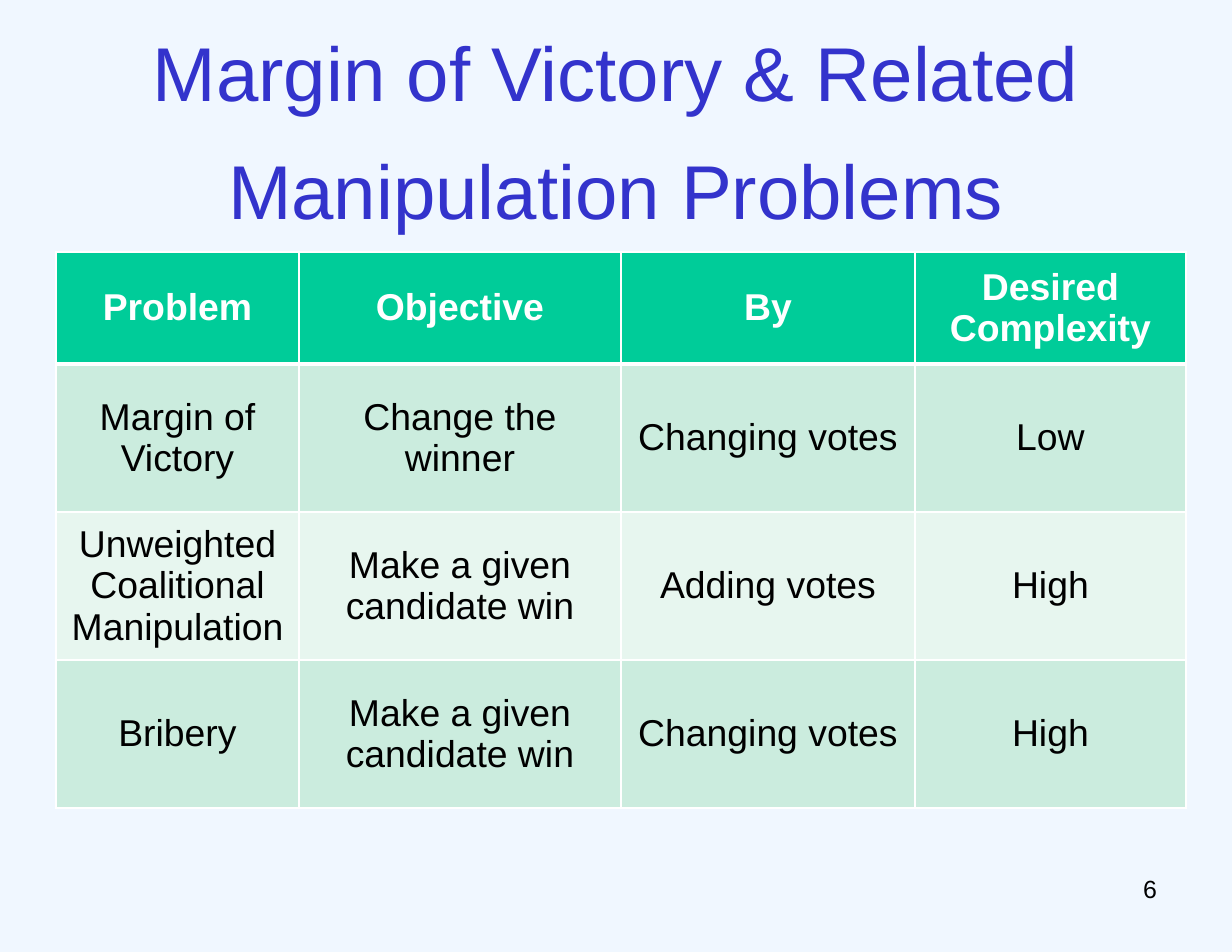
"""Build the slide that compares margin of victory with related manipulation problems."""
from dataclasses import dataclass

from lxml import etree
from pptx import Presentation
from pptx import util as u
from pptx.dml.color import RGBColor
from pptx.enum import text
from pptx.oxml.ns import qn

TITLE = "Margin of Victory & Related Manipulation Problems"
PAGE = "6"
ROWS = [
    ("Problem", "Objective", "By", "Desired Complexity"),
    ("Margin of Victory", "Change the winner", "Changing votes", "Low"),
    ("Unweighted Coalitional Manipulation", "Make a given candidate win", "Adding votes", "High"),
    ("Bribery", "Make a given candidate win", "Changing votes", "High"),
]
SLIDE = (1232, 952)
TITLE_BOX = (62, 38, 1107, 157)
PAGE_BOX = (883, 867, 1107 + 62 - 883, 65)
TABLE_AT = (56, 252)
COL_WIDTHS = (243, 322, 294, 271)
HEADER_HEIGHT, BODY_HEIGHT = 112, 148
INSETS = (12, 7)
EMU_PER_PX = 914400 / 112


@dataclass(frozen=True)
class Theme:
    font: str = "Arial"
    background: str = "F0F7FF"
    title: str = "3333CC"
    ink: str = "000000"
    white: str = "FFFFFF"
    header: str = "00CC99"
    bands: tuple = ("E7F6EF", "CBECDE")
    title_size: int = 49
    table_size: int = 24
    page_size: int = 16
    title_spacing: float = 1.29
    thin: int = 1
    thick: int = 3


T = Theme()


def px(n):
    return u.Emu(round(n * EMU_PER_PX))


def paint(fill, color):
    fill.solid()
    fill.fore_color.rgb = RGBColor.from_string(color)


def write(tf, words, size, color, align, bold=False):
    p = tf.paragraphs[0]
    p.alignment = align
    r = p.add_run()
    r.text = words
    r.font.name, r.font.size, r.font.bold = T.font, u.Pt(size), bold
    r.font.color.rgb = RGBColor.from_string(color)
    return p


def add_text(slide, box, words, size, color, align, anchor):
    tf = slide.shapes.add_textbox(*map(px, box)).text_frame
    tf.word_wrap = True
    tf.vertical_anchor = anchor
    tf.margin_left = tf.margin_right = px(INSETS[0])
    tf.margin_top = tf.margin_bottom = px(INSETS[1])
    return write(tf, words, size, color, align)


def add_borders(cell, top, bottom):
    tc_pr = cell._tc.get_or_add_tcPr()
    widths = {"a:lnL": T.thin, "a:lnR": T.thin, "a:lnT": top, "a:lnB": bottom}
    for i, (tag, width) in enumerate(widths.items()):
        ln = etree.Element(qn(tag), w=str(u.Pt(width)))
        fill = etree.SubElement(ln, qn("a:solidFill"))
        etree.SubElement(fill, qn("a:srgbClr"), val=T.white)
        tc_pr.insert(i, ln)


def add_problem_table(slide):
    heights = [HEADER_HEIGHT] + [BODY_HEIGHT] * (len(ROWS) - 1)
    size = (sum(COL_WIDTHS), sum(heights))
    table = slide.shapes.add_table(len(ROWS), len(COL_WIDTHS), *map(px, TABLE_AT + size)).table
    for column, width in zip(table.columns, COL_WIDTHS):
        column.width = px(width)
    for i, (row, height, labels) in enumerate(zip(table.rows, heights, ROWS)):
        row.height = px(height)
        is_header = i == 0
        for cell, label in zip(row.cells, labels):
            cell.vertical_anchor = text.MSO_ANCHOR.MIDDLE
            paint(cell.fill, T.header if is_header else T.bands[i % 2])
            add_borders(cell, T.thick if i == 1 else T.thin, T.thick if is_header else T.thin)
            write(cell.text_frame, label, T.table_size, T.white if is_header else T.ink,
                  text.PP_ALIGN.CENTER, is_header)


def main():
    prs = Presentation()
    prs.slide_width, prs.slide_height = map(px, SLIDE)
    slide = prs.slides.add_slide(prs.slide_layouts[6])
    paint(slide.background.fill, T.background)
    add_text(slide, PAGE_BOX, PAGE, T.page_size, T.ink, text.PP_ALIGN.RIGHT, text.MSO_ANCHOR.TOP)
    p = add_text(slide, TITLE_BOX, TITLE, T.title_size, T.title,
                 text.PP_ALIGN.CENTER, text.MSO_ANCHOR.MIDDLE)
    p.line_spacing = T.title_spacing
    add_problem_table(slide)
    prs.save("out.pptx")


if __name__ == "__main__":
    main()
